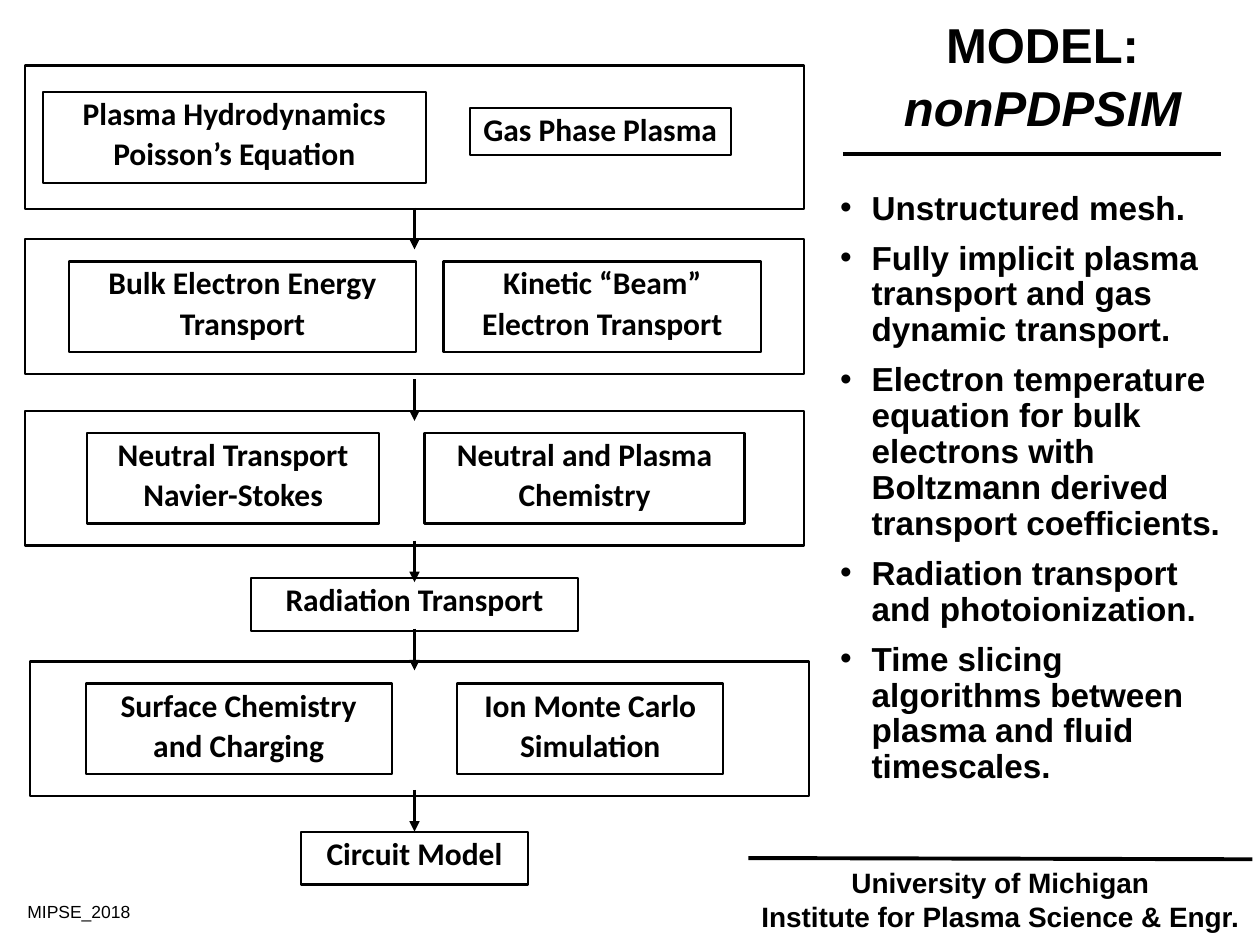
from dataclasses import dataclass
from typing import Optional

from lxml.etree import SubElement
from pptx import Presentation
from pptx.dml.color import RGBColor
from pptx.enum.shapes import MSO_CONNECTOR as Connector, MSO_SHAPE as Shape
from pptx.enum.text import MSO_ANCHOR as Anchor, PP_ALIGN as Align
from pptx.oxml.ns import qn
from pptx.util import Inches, Pt

# The slide is a grid of 100 columns by 75 rows
COLUMNS, ROWS = 100, 75
BLACK = "000000"

deck = Presentation()
deck.slide_width, deck.slide_height = Inches(10), Inches(7.5)
slide = deck.slides.add_slide(deck.slide_layouts[6])


@dataclass
class Area:
    column: float
    row: float
    columns: float
    rows: float


@dataclass
class Step:
    area: Area
    lines: list[str]


@dataclass
class Stage:
    frame: Area
    steps: list[Step]


def col(count: float) -> int:
    return round(deck.slide_width * count / COLUMNS)


def row(count: float) -> int:
    return round(deck.slide_height * count / ROWS)


def place(area: Area) -> tuple[int, int, int, int]:
    return col(area.column), row(area.row), col(area.columns), row(area.rows)


def color(value: str) -> RGBColor:
    return RGBColor.from_string(value)


def write(frame, lines: list[str], *, size: float, font: str = "Arial",
          bold: bool = True, italic_line: Optional[int] = None,
          align: Align = Align.CENTER, spacing: float = 0.9,
          before: float = 0, after: float = 0,
          bullet: bool = False, wrap: bool = True) -> None:
    """Fill a text frame, one paragraph per line."""
    frame.word_wrap = wrap
    frame.vertical_anchor = Anchor.TOP
    for index, line in enumerate(lines):
        paragraph = frame.paragraphs[0] if index == 0 else frame.add_paragraph()
        paragraph.alignment = align
        paragraph.line_spacing = spacing
        if index and before:
            paragraph.space_before = Pt(before)
        if after:
            paragraph.space_after = Pt(after)
        if bullet:
            properties = paragraph._p.get_or_add_pPr()
            properties.set("marL", str(Inches(0.25)))
            properties.set("indent", str(-Inches(0.25)))
            SubElement(properties, qn("a:buFont"), typeface="Arial")
            SubElement(properties, qn("a:buChar"), char="•")
        run = paragraph.add_run()
        run.text = line
        run.font.name, run.font.size = font, Pt(size)
        run.font.bold, run.font.italic = bold, index == italic_line
        run.font.color.rgb = color(BLACK)


def add_text(area: Area, lines: list[str], **text_format) -> None:
    write(slide.shapes.add_textbox(*place(area)).text_frame, lines, **text_format)


def add_box(area: Area, lines: Optional[list[str]] = None) -> None:
    box = slide.shapes.add_shape(Shape.RECTANGLE, *place(area))
    box.shadow.inherit = False
    box.fill.background()
    box.line.color.rgb = color(BLACK)
    box.line.width = Pt(1.25)
    if lines:
        write(box.text_frame, lines, size=18, font="Calibri", before=3.6, wrap=False)


def add_line(start: tuple[float, float], end: tuple[float, float],
             width: float = 2.25, arrow: bool = False) -> None:
    line = slide.shapes.add_connector(
        Connector.STRAIGHT, col(start[0]), row(start[1]), col(end[0]), row(end[1]))
    line.line.color.rgb = color(BLACK)
    line.line.width = Pt(width)
    if arrow:
        SubElement(line.line._get_or_add_ln(), qn("a:tailEnd"), type="triangle")
    SubElement(line._element.spPr, qn("a:effectLst"))


def paired_stage(left: float, top: float, *steps: tuple[float, float, list[str]]) -> Stage:
    """A frame with two-line steps, each given as column, columns and lines."""
    return Stage(Area(left, top, 61.8, 10.7),
                 [Step(Area(column, top + 1.75, columns, 7.2), lines)
                  for column, columns, lines in steps])


# Title and its rule
add_text(Area(67.6, 1.2, 30.3, 10.3), ["MODEL:", "nonPDPSIM"],
         size=28, before=5.6, italic_line=1)
add_line((66.9, 12.2), (96.9, 12.2))

# Features of the model
add_text(Area(65.7, 14.7, 33.1, 48.7), [
    "Unstructured mesh.",
    "Fully implicit plasma transport and gas dynamic transport.",
    "Electron temperature equation for bulk electrons with Boltzmann derived "
    "transport coefficients.",
    "Radiation transport and photoionization.",
    "Time slicing algorithms between plasma and fluid timescales.",
], size=19, align=Align.LEFT, after=8, bullet=True)

# Framed stages of the flow chart
stages = [
    Stage(Area(2, 5.2, 61.8, 11.4), [
        Step(Area(3.4, 7.3, 30.4, 7.2), ["Plasma Hydrodynamics", "Poisson’s Equation"]),
        Step(Area(37.3, 8.6, 20.7, 3.7), ["Gas Phase Plasma"]),
    ]),
    paired_stage(2, 19,
                 (5.5, 27.5, ["Bulk Electron Energy", "Transport"]),
                 (35.2, 25.2, ["Kinetic “Beam”", "Electron Transport"])),
    paired_stage(2, 32.6,
                 (6.9, 23.2, ["Neutral Transport", "Navier-Stokes"]),
                 (33.7, 25.4, ["Neutral and Plasma", "Chemistry"])),
    paired_stage(2.4, 52.5,
                 (6.8, 24.3, ["Surface Chemistry", "and Charging"]),
                 (36.3, 21.1, ["Ion Monte Carlo", "Simulation"])),
]
for stage in stages:
    add_box(stage.frame)
    for step in stage.steps:
        add_box(step.area, step.lines)

# Stages of a single step, centred on the flow
FLOW_COLUMN = 32.9
for label, top, columns in [("Radiation Transport", 45.9, 25.9),
                            ("Circuit Model", 66, 18)]:
    add_box(Area(FLOW_COLUMN - columns / 2, top, columns, 4.2), [label])

# Arrows from stage to stage
for top in (16.5, 30.1, 42.9, 49.9, 62.7):
    add_line((FLOW_COLUMN, top), (FLOW_COLUMN, top + 3.3), width=1.75, arrow=True)

# Footer
add_line((59.4, 68.1), (99.4, 68.2))
add_text(Area(58.8, 68.2, 41.2, 6.4),
         ["University of Michigan", "Institute for Plasma Science & Engr."],
         size=16, spacing=1.0)
add_text(Area(1.2, 71.2, 11, 2.5), ["MIPSE_2018"],
         size=10, bold=False, align=Align.LEFT)

deck.save("out.pptx")
